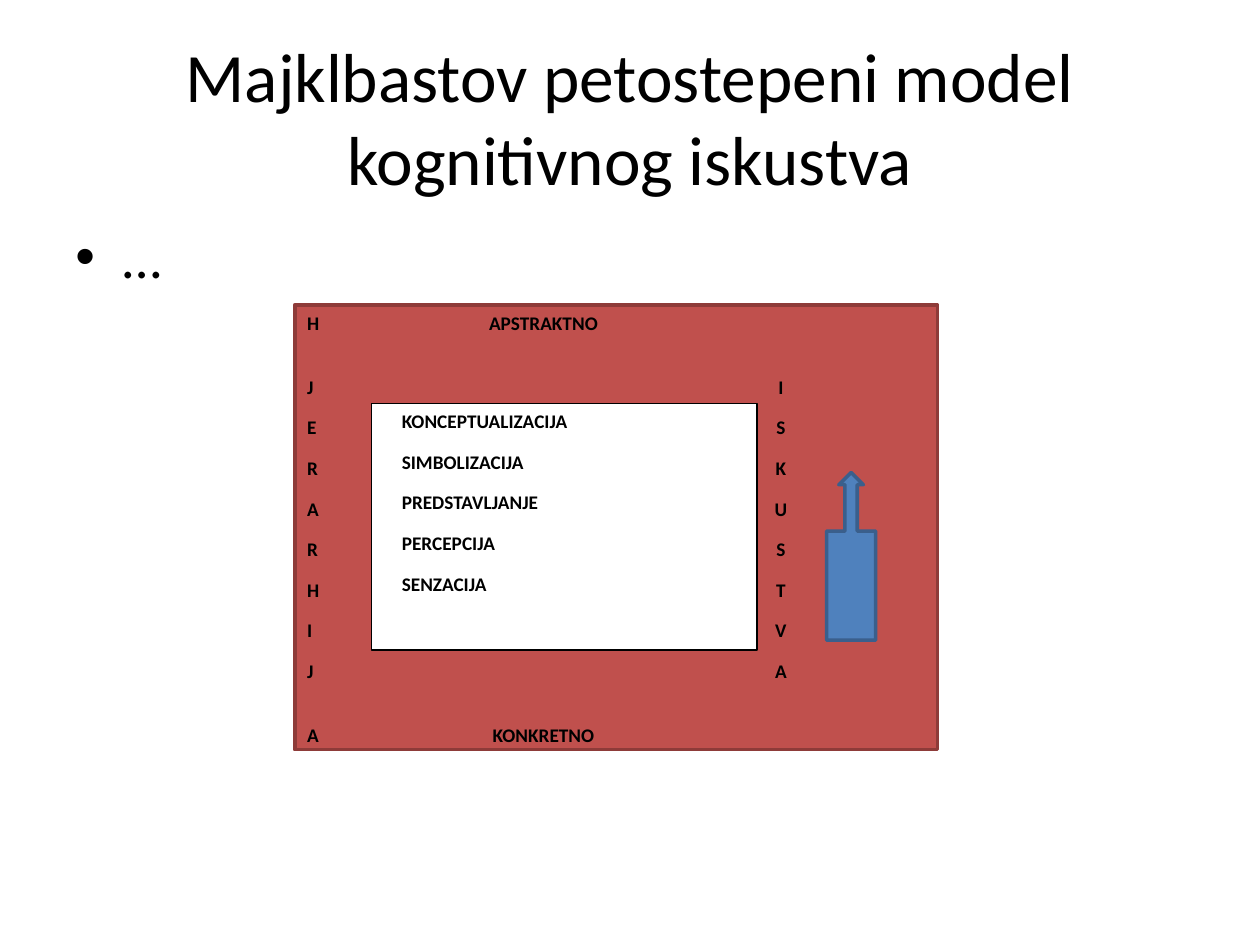
import pptx
import pptx.dml.color
import pptx.enum.shapes
import pptx.enum.text
import pptx.util
import lxml.etree
import pptx.oxml.ns

Pt = pptx.util.Pt
RGBColor = pptx.dml.color.RGBColor
PP_ALIGN = pptx.enum.text.PP_ALIGN
MSO_ANCHOR = pptx.enum.text.MSO_ANCHOR
MSO_SHAPE = pptx.enum.shapes.MSO_SHAPE

BLACK = RGBColor(0x00, 0x00, 0x00)
WHITE = RGBColor(0xFF, 0xFF, 0xFF)
RED = RGBColor(0xC0, 0x50, 0x4D)
DARK_RED = RGBColor(0x8E, 0x3B, 0x39)
BLUE = RGBColor(0x4F, 0x81, 0xBD)
DARK_BLUE = RGBColor(0x3A, 0x5F, 0x8C)

FONT = "Calibri"
LABEL_SIZE = 11
PARAGRAPH_GAP = 10
WIDE_GAP = 23.3
MIDDLE_TAB = 135
RIGHT_TAB = 270.7

HIERARCHY_ROWS = [
    ("H", "APSTRAKTNO", MIDDLE_TAB, WIDE_GAP),
    *[(left, right, RIGHT_TAB, PARAGRAPH_GAP) for left, right in zip("JERARHI", "ISKUSTV")],
    ("J", "A", RIGHT_TAB, WIDE_GAP),
    ("A", "KONKRETNO", MIDDLE_TAB, PARAGRAPH_GAP),
]
LEVELS = ["KONCEPTUALIZACIJA", "SIMBOLIZACIJA", "PREDSTAVLJANJE", "PERCEPCIJA", "SENZACIJA"]


def add_run(paragraph, text, size, bold=False):
    run = paragraph.add_run()
    run.text = text
    run.font.name = FONT
    run.font.size = Pt(size)
    run.font.bold = bold
    run.font.color.rgb = BLACK


def add_paragraph(text_frame, index):
    return text_frame.add_paragraph() if index else text_frame.paragraphs[0]


def add_text_box(slide, left, top, width, height, text, size):
    text_frame = slide.shapes.add_textbox(Pt(left), Pt(top), Pt(width), Pt(height)).text_frame
    text_frame.word_wrap = True
    add_run(text_frame.paragraphs[0], text, size)
    return text_frame


def add_filled_shape(slide, kind, left, top, width, height, fill, line, line_width):
    shape = slide.shapes.add_shape(kind, Pt(left), Pt(top), Pt(width), Pt(height))
    shape.shadow.inherit = False
    shape.fill.solid()
    shape.fill.fore_color.rgb = fill
    shape.line.color.rgb = line
    shape.line.width = Pt(line_width)
    shape.text_frame.vertical_anchor = MSO_ANCHOR.TOP
    return shape


def add_bullet(paragraph, indent):
    properties = paragraph._p.get_or_add_pPr()
    properties.set("marL", str(Pt(indent)))
    properties.set("indent", str(-Pt(indent)))
    font = lxml.etree.SubElement(properties, pptx.oxml.ns.qn("a:buFont"))
    font.set("typeface", "Arial")
    bullet = lxml.etree.SubElement(properties, pptx.oxml.ns.qn("a:buChar"))
    bullet.set("char", "•")


def add_center_tab(paragraph, position):
    properties = paragraph._p.get_or_add_pPr()
    tab_list = lxml.etree.SubElement(properties, pptx.oxml.ns.qn("a:tabLst"))
    tab = lxml.etree.SubElement(tab_list, pptx.oxml.ns.qn("a:tab"))
    tab.set("pos", str(Pt(position)))
    tab.set("algn", "ctr")


def fill_hierarchy(text_frame):
    for index, (left, right, tab_position, gap) in enumerate(HIERARCHY_ROWS):
        paragraph = add_paragraph(text_frame, index)
        paragraph.alignment = PP_ALIGN.LEFT
        paragraph.space_after = Pt(gap)
        add_center_tab(paragraph, tab_position)
        add_run(paragraph, f"{left}\t{right}", LABEL_SIZE, bold=True)


def fill_levels(text_frame):
    text_frame.margin_left = Pt(17.2)
    for index, level in enumerate(LEVELS):
        paragraph = add_paragraph(text_frame, index)
        paragraph.alignment = PP_ALIGN.LEFT
        paragraph.space_after = Pt(PARAGRAPH_GAP)
        add_run(paragraph, level, LABEL_SIZE, bold=True)


def main():
    presentation = pptx.Presentation()
    presentation.slide_width = Pt(720)
    presentation.slide_height = Pt(540)
    slide = presentation.slides.add_slide(presentation.slide_layouts[6])

    title = add_text_box(slide, 36, 21.6, 648, 90,
                         "Majklbastov petostepeni model kognitivnog iskustva", 39.6)
    title.vertical_anchor = MSO_ANCHOR.MIDDLE
    title.paragraphs[0].alignment = PP_ALIGN.CENTER

    body = add_text_box(slide, 36, 123.8, 644.4, 358.6, "…", 32)
    add_bullet(body.paragraphs[0], 27)

    hierarchy = add_filled_shape(slide, MSO_SHAPE.RECTANGLE, 168.5, 174.2, 367.2, 254.2,
                                 RED, DARK_RED, 2)
    fill_hierarchy(hierarchy.text_frame)

    levels = add_filled_shape(slide, MSO_SHAPE.RECTANGLE, 212.4, 230.4, 220.3, 141.1,
                              WHITE, BLACK, 0.75)
    fill_levels(levels.text_frame)

    add_filled_shape(slide, MSO_SHAPE.UP_ARROW_CALLOUT, 472.3, 270, 28.1, 95.8,
                     BLUE, DARK_BLUE, 2)

    presentation.save("out.pptx")


if __name__ == "__main__":
    main()
